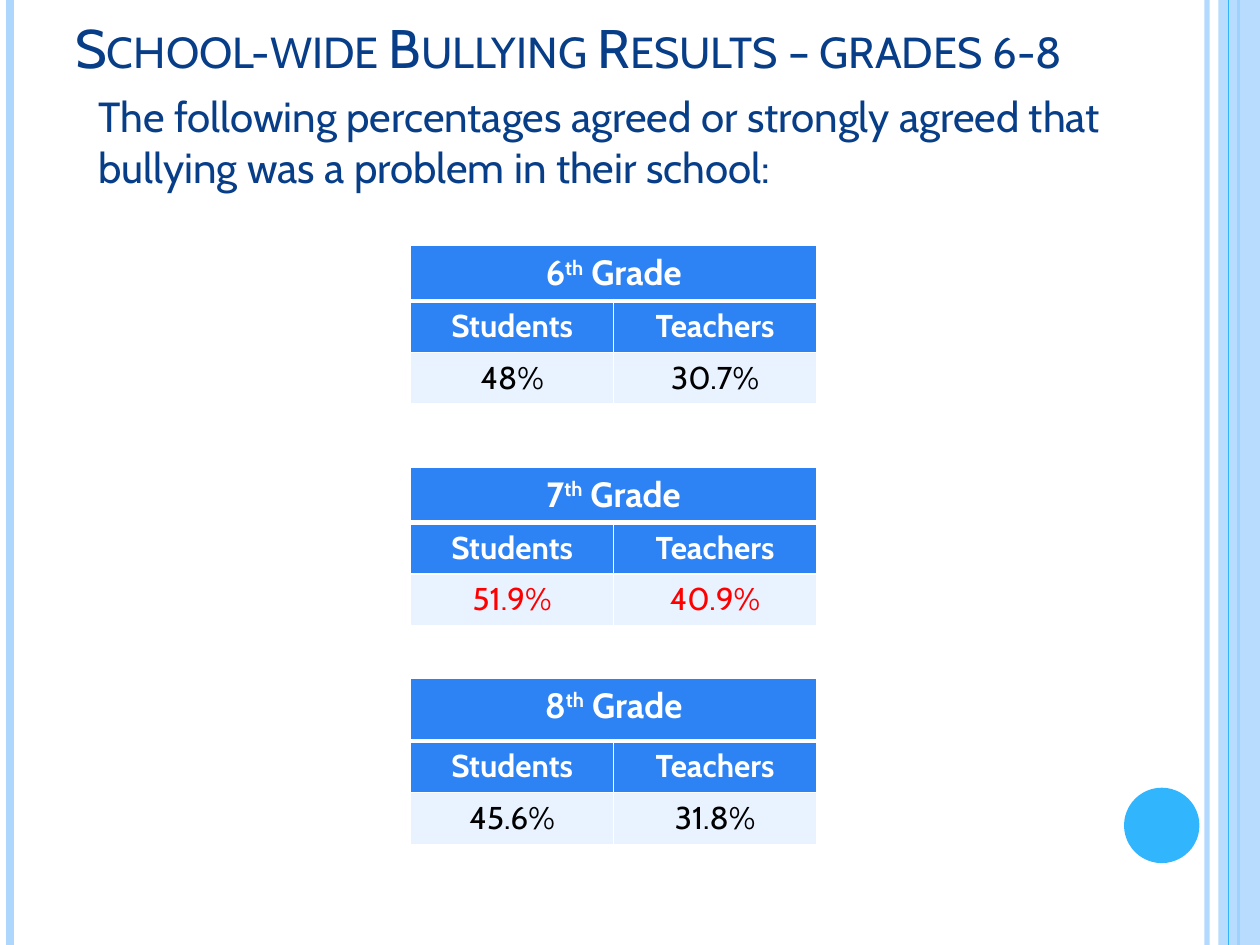
from lxml import etree
from pptx import Presentation
from pptx.dml.color import RGBColor
from pptx.enum.shapes import MSO_CONNECTOR, MSO_SHAPE
from pptx.enum.text import MSO_ANCHOR, MSO_AUTO_SIZE, PP_ALIGN
from pptx.oxml.ns import qn
from pptx.util import Cm, Pt

STRAIGHT = MSO_CONNECTOR.STRAIGHT
RECTANGLE, OVAL = MSO_SHAPE.RECTANGLE, MSO_SHAPE.OVAL
BOTTOM, NO_FIT = MSO_ANCHOR.BOTTOM, MSO_AUTO_SIZE.NONE
LEFT, CENTER = PP_ALIGN.LEFT, PP_ALIGN.CENTER

FONT = "Cabin"
NAVY, BLUE, SKY = "073E87", "2D83F4", "31B6FD"
PALE_BLUE, ICE = "AED7FE", "E8F3FF"
WHITE, BLACK, RED = "FFFFFF", "000000", "FF0000"
SLIDE_WIDTH, SLIDE_HEIGHT = 25.4, 19.05
TABLE_LEFT, COLUMN_WIDTH, ROW_HEIGHT = 8.28, 4.09, 1.04

STRIPES = [
    (24.33, PALE_BLUE, 3, 93),
    (0.2, PALE_BLUE, 4.5, 100),
    (24.97, SKY, 1.5, 100),
    (24.77, SKY, 0.75, 100),
]
GRADES = [
    ("6", 4.95, ROW_HEIGHT, ("48%", "30.7%"), BLACK),
    ("7", 9.42, ROW_HEIGHT, ("51.9%", "40.9%"), RED),
    ("8", 13.67, 1.27, ("45.6%", "31.8%"), BLACK),
]


def color(hex_code):
    return RGBColor.from_string(hex_code)


def set_opacity(element, percent):
    fill_color = next(element.iter(qn("a:srgbClr")))
    etree.SubElement(fill_color, qn("a:alpha"), val=str(percent * 1000))


def format_run(run, size, hex_code, bold=False):
    run.font.name = FONT
    run.font.size = Pt(size)
    run.font.bold = bold
    run.font.color.rgb = color(hex_code)


def add_stripe(slide, x, hex_code, width, opacity):
    stripe = slide.shapes.add_connector(STRAIGHT, Cm(x), 0, Cm(x), Cm(SLIDE_HEIGHT))
    stripe.line.color.rgb = color(hex_code)
    stripe.line.width = Pt(width)
    properties = stripe._element.spPr
    etree.SubElement(properties, qn("a:effectLst"))
    if opacity < 100:
        set_opacity(properties, opacity)


def add_plain_shape(slide, kind, left, top, width, height, hex_code):
    shape = slide.shapes.add_shape(kind, Cm(left), Cm(top), Cm(width), Cm(height))
    shape.shadow.inherit = False
    shape.fill.solid()
    shape.fill.fore_color.rgb = color(hex_code)
    shape.line.fill.background()
    return shape


def write_text(shape, text, size):
    text_frame = shape.text_frame
    text_frame.text = text
    text_frame.word_wrap = True
    text_frame.auto_size = NO_FIT
    text_frame.vertical_anchor = BOTTOM
    paragraph = text_frame.paragraphs[0]
    paragraph.alignment = LEFT
    run = paragraph.runs[0]
    format_run(run, size, NAVY)
    return run


def add_heading(slide, text):
    heading = slide.shapes.add_textbox(Cm(1.27), Cm(0.38), Cm(22.2), Cm(1.35))
    run = write_text(heading, text, 31)
    run.font._element.set("cap", "small")


def fill_title(slide, text):
    title = slide.shapes.title
    title.left, title.top = Cm(1.73), Cm(1.73)
    title.width, title.height = Cm(20.83), Cm(2.26)
    write_text(title, text, 24)


def style_cell(cell, hex_code, bottom_width=1):
    properties = cell._tc.get_or_add_tcPr()
    for side in ("lnL", "lnR", "lnT", "lnB"):
        width = bottom_width if side == "lnB" else 1
        border = etree.SubElement(properties, qn(f"a:{side}"), w=str(Pt(width)))
        border_fill = etree.SubElement(border, qn("a:solidFill"))
        etree.SubElement(border_fill, qn("a:srgbClr"), val=WHITE)
    cell.fill.solid()
    cell.fill.fore_color.rgb = color(hex_code)


def write_cell(cell, parts, size, hex_code, bold):
    paragraph = cell.text_frame.paragraphs[0]
    paragraph.alignment = CENTER
    for part in parts:
        run = paragraph.add_run()
        run.text = part
        format_run(run, size, hex_code, bold)
    return paragraph


def add_grade_table(slide, grade, top, header_height, values, value_color):
    heights = (header_height, ROW_HEIGHT, ROW_HEIGHT)
    frame = slide.shapes.add_table(
        3, 2, Cm(TABLE_LEFT), Cm(top), Cm(2 * COLUMN_WIDTH), Cm(sum(heights))
    )
    table = frame.table
    for row, height in zip(table.rows, heights):
        row.height = Cm(height)
    table.cell(0, 0).merge(table.cell(0, 1))
    header = write_cell(table.cell(0, 0), (grade, "th", " Grade"), 20, WHITE, True)
    header.runs[1].font._element.set("baseline", "30000")
    for column, label in enumerate(("Students", "Teachers")):
        table.columns[column].width = Cm(COLUMN_WIDTH)
        style_cell(table.cell(0, column), BLUE, 3)
        style_cell(table.cell(1, column), BLUE)
        style_cell(table.cell(2, column), ICE)
        write_cell(table.cell(1, column), (label,), 18, WHITE, True)
        write_cell(table.cell(2, column), (values[column],), 18, value_color, False)


def main():
    presentation = Presentation()
    presentation.slide_width, presentation.slide_height = Cm(SLIDE_WIDTH), Cm(SLIDE_HEIGHT)
    slide = presentation.slides.add_slide(presentation.slide_layouts[5])
    for stripe in STRIPES[:3]:
        add_stripe(slide, *stripe)
    band = add_plain_shape(slide, RECTANGLE, 24.56, 0, 0.84, SLIDE_HEIGHT, PALE_BLUE)
    set_opacity(band._element.spPr, 87)
    add_stripe(slide, *STRIPES[3])
    add_plain_shape(slide, OVAL, 22.66, 15.88, 1.52, 1.52, SKY)
    fill_title(
        slide,
        "The following percentages agreed or strongly agreed that "
        "bullying was a problem in their school:",
    )
    add_heading(slide, "School-wide Bullying Results – grades 6-8")
    for grade in GRADES:
        add_grade_table(slide, *grade)
    presentation.save("out.pptx")


if __name__ == "__main__":
    main()
